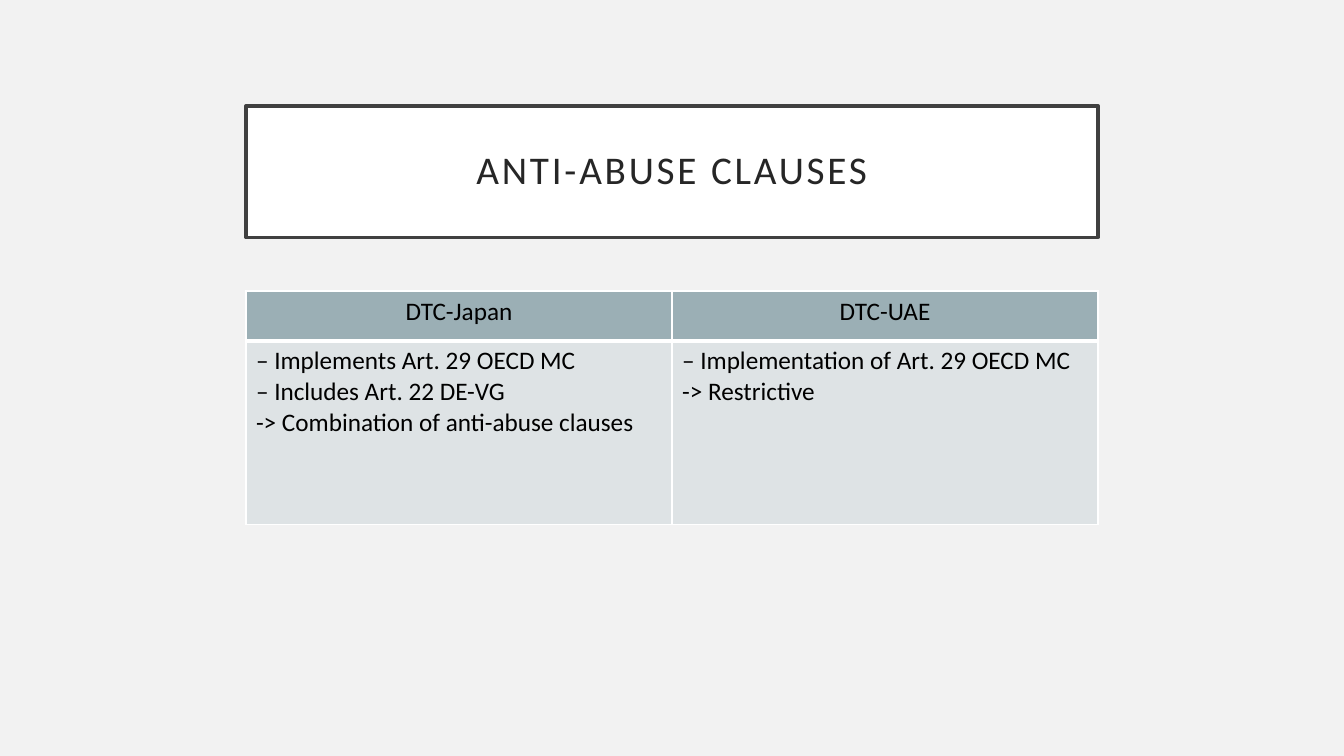
from dataclasses import dataclass
from lxml.etree import SubElement
from pptx import Presentation
from pptx.dml.color import RGBColor as Rgb
from pptx.enum.shapes import MSO_SHAPE as Shape
from pptx.enum.text import MSO_ANCHOR as Anchor, PP_ALIGN as Align
from pptx.oxml.ns import qn
from pptx.util import Inches, Pt


@dataclass(frozen=True)
class Theme:
    """Colours, type sizes and line widths of the slide."""
    font: str = "Calibri"
    back: str = "F2F2F2"
    white: str = "FFFFFF"
    frame: str = "404040"
    title: str = "262626"
    text: str = "000000"
    head: str = "9BAFB5"
    body: str = "DEE3E5"
    big: int = 28
    small: int = 18
    thin: int = 1
    thick: int = 3


THEME = Theme()
WIDE, HIGH = Inches(13.33), Inches(7.5)
LEFT, SPAN = 0.183, 0.634
HEADS = ("DTC-Japan", "DTC-UAE")
NOTES = (
    ("– Implements Art. 29 OECD MC", "– Includes Art. 22 DE-VG",
     "-> Combination of anti-abuse clauses"),
    ("– Implementation of Art. 29 OECD MC", "-> Restrictive"),
)


def paint(fill, tone):
    """Give a fill one solid colour."""
    fill.solid()
    fill.fore_color.rgb = Rgb.from_string(tone)


def write(frame, lines, size, tone, align):
    """Write one paragraph per line and return the runs."""
    runs = []
    for i, line in enumerate(lines):
        para = frame.paragraphs[0] if i == 0 else frame.add_paragraph()
        para.alignment = align
        run = para.add_run()
        run.text = line
        run.font.name = THEME.font
        run.font.size = Pt(size)
        run.font.color.rgb = Rgb.from_string(tone)
        runs.append(run)
    return runs


def add_title(slide, text, top, tall):
    """Add the framed title box."""
    box = slide.shapes.add_shape(
        Shape.RECTANGLE, int(WIDE * LEFT), int(HIGH * top),
        int(WIDE * SPAN), int(HIGH * tall))
    box.shadow.inherit = False
    paint(box.fill, THEME.white)
    paint(box.line.fill, THEME.frame)
    box.line.width = Pt(2.5)
    frame = box.text_frame
    frame.word_wrap = True
    frame.vertical_anchor = Anchor.MIDDLE
    frame.margin_left = frame.margin_right = Inches(0.2)
    frame.margin_top = frame.margin_bottom = Inches(0.2)
    run, = write(frame, [text], THEME.big, THEME.title, Align.CENTER)
    frame.paragraphs[0].line_spacing = 0.9
    run.font._element.set("spc", "200")


def edge(cell, side, width):
    """Draw one white border, placed ahead of the cell fill."""
    props = cell._tc.get_or_add_tcPr()
    line = SubElement(props, qn(f"a:ln{side}"), w=str(Pt(width)))
    fill = SubElement(line, qn("a:solidFill"))
    SubElement(fill, qn("a:srgbClr"), val=THEME.white)


def fill_cell(cell, lines, tone, align, base):
    """Set the borders, fill and text of a cell."""
    for side, width in zip("LRTB", (THEME.thin, THEME.thin, *base)):
        edge(cell, side, width)
    paint(cell.fill, tone)
    write(cell.text_frame, lines, THEME.small, THEME.text, align)


def add_grid(slide, top, rows):
    """Add the table that compares the two treaties."""
    grid = slide.shapes.add_table(
        len(rows), len(HEADS), int(WIDE * LEFT), int(HIGH * top),
        int(WIDE * SPAN), int(HIGH * sum(rows))).table
    grid.first_row = grid.horz_banding = False
    for row, share in zip(grid.rows, rows):
        row.height = int(HIGH * share)
    for i, (head, notes) in enumerate(zip(HEADS, NOTES)):
        fill_cell(grid.cell(0, i), [head], THEME.head, Align.CENTER,
                  (THEME.thin, THEME.thick))
        fill_cell(grid.cell(1, i), notes, THEME.body, Align.LEFT,
                  (THEME.thick, THEME.thin))


def main():
    """Build and save the slide."""
    deck = Presentation()
    deck.slide_width, deck.slide_height = WIDE, HIGH
    slide = deck.slides.add_slide(deck.slide_layouts[6])
    paint(slide.background.fill, THEME.back)
    add_title(slide, "ANTI-ABUSE CLAUSES", 0.14, 0.174)
    add_grid(slide, 0.385, (0.066, 0.243))
    deck.save("out.pptx")


if __name__ == "__main__":
    main()
